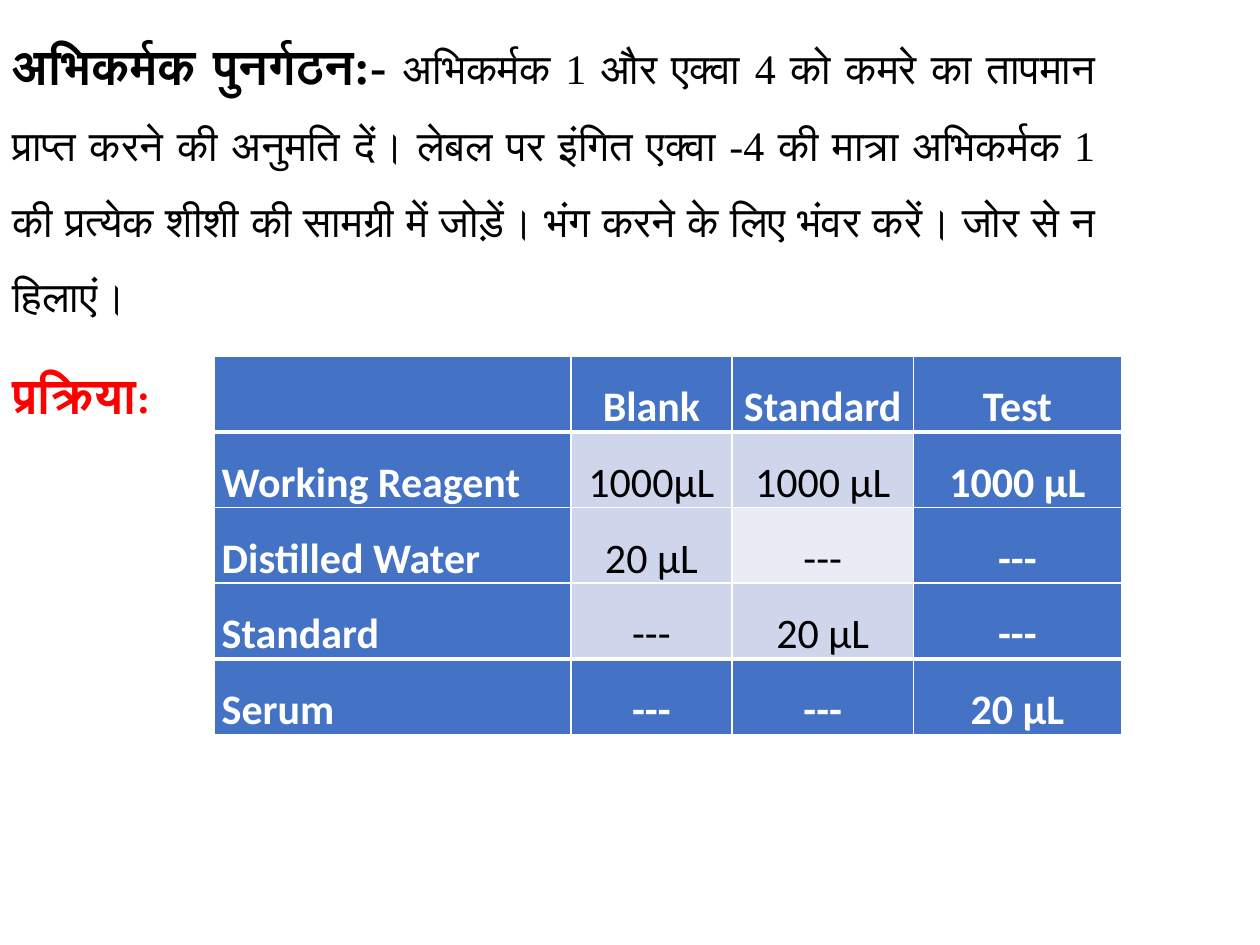
from itertools import product
from lxml.etree import SubElement
from pptx import Presentation
from pptx.dml.color import RGBColor
from pptx.enum.text import MSO_AUTO_SIZE as AutoSize, PP_ALIGN as Align
from pptx.oxml.ns import qn
from pptx.util import Inches, Pt


def color(code):
    return RGBColor.from_string(code)


def add_span(para, text, face, size, ink, bold):
    span = para.add_run()
    span.text = text
    for name, value in {"name": face, "size": Pt(size), "bold": bold}.items():
        setattr(span.font, name, value)
    span.font.color.rgb = color(ink)


deck = Presentation()
deck.slide_width, deck.slide_height = Inches(10), Inches(7.5)
wide, high = deck.slide_width, deck.slide_height
page = deck.slides.add_slide(deck.slide_layouts[6])
spacing = {"line_spacing": 1.5, "space_after": Pt(8)}

box = page.shapes.add_textbox(0, 0, int(wide * 0.879), int(high * 0.459))
frame = box.text_frame
frame.word_wrap = True
frame.auto_size = AutoSize.SHAPE_TO_FIT_TEXT
paragraphs = [
    [("अभिकर्मक पुनर्गठन:- ", 28, "000000", True),
     ("अभिकर्मक 1 और एक्वा 4 को कमरे का तापमान प्राप्त करने की अनुमति दें। "
      "लेबल पर इंगित एक्वा -4 की मात्रा अभिकर्मक 1 की प्रत्येक शीशी की सामग्री में जोड़ें। "
      "भंग करने के लिए भंवर करें। जोर से न हिलाएं।", 24, "000000", False)],
    [("प्रक्रिया", 28, "FF0000", True), (": ", 24, "FF0000", True)],
]
for index, spans in enumerate(paragraphs):
    para = frame.add_paragraph() if index else frame.paragraphs[0]
    for name, value in {"alignment": Align.JUSTIFY, **spacing}.items():
        setattr(para, name, value)
    for text, size, ink, bold in spans:
        add_span(para, text, "Times New Roman", size, ink, bold)

rows = [
    ["", "Blank", "Standard", "Test"],
    ["Working Reagent", "1000µL", "1000 µL", "1000 µL"],
    ["Distilled Water", "20 µL", "---", "---"],
    ["Standard", "---", "20 µL", "---"],
    ["Serum ", "---", "---", "20 µL"],
]
shares = [0.283, 0.128, 0.144, 0.165]
row_height = int(high * 0.08)
last_row, last_column = len(rows) - 1, len(shares) - 1
table = page.shapes.add_table(
    len(rows), len(shares), int(wide * 0.17), int(high * 0.377),
    int(wide * sum(shares)), row_height * len(rows)).table
for column, share in zip(table.columns, shares):
    column.width = int(wide * share)
for row in table.rows:
    row.height = row_height

margins = {"margin_left": Inches(0.06), "margin_right": Inches(0.06),
           "margin_top": 0, "margin_bottom": 0}
for r, c in product(range(len(rows)), range(len(shares))):
    cell = table.cell(r, c)
    for name, value in margins.items():
        setattr(cell, name, value)
    edge = r in (0, last_row) or c in (0, last_column)
    weights = {"L": 1, "R": 1, "T": 3 if r in (1, last_row) else 1,
               "B": 3 if r in (0, last_row - 1) else 1}
    for side, weight in weights.items():
        line = SubElement(cell._tc.get_or_add_tcPr(), qn(f"a:ln{side}"), w=str(Pt(weight)))
        SubElement(SubElement(line, qn("a:solidFill")), qn("a:srgbClr"), val="FFFFFF")
    cell.fill.solid()
    body_fill = "E9EBF5" if (r, c) == (2, 2) else "CFD5EA"
    cell.fill.fore_color.rgb = color("4472C4" if edge else body_fill)
    para = cell.text_frame.paragraphs[0]
    alignment = Align.CENTER if c else Align.JUSTIFY
    for name, value in {"alignment": alignment, **spacing}.items():
        setattr(para, name, value)
    if rows[r][c]:
        add_span(para, rows[r][c], "Calibri", 24, "FFFFFF" if edge else "000000", edge)

deck.save("out.pptx")
